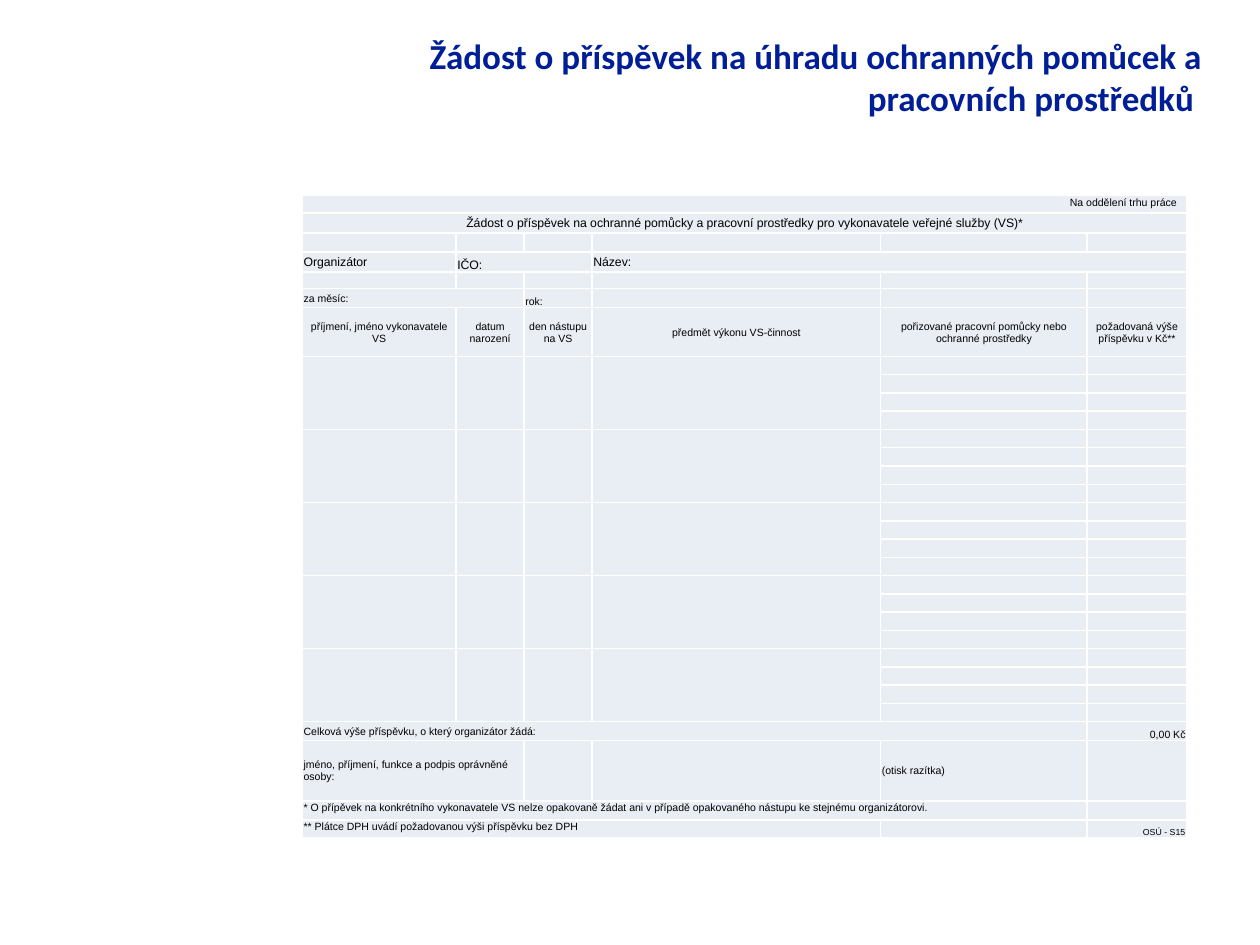
from dataclasses import dataclass
from itertools import product

from lxml.etree import SubElement
from pptx import Presentation
from pptx.dml.color import RGBColor
from pptx.enum.text import MSO_ANCHOR as Anchor, MSO_AUTO_SIZE as AutoSize, PP_ALIGN as Align
from pptx.oxml.ns import qn
from pptx.slide import Slide
from pptx.util import Inches, Pt

COLUMNS = [1.22, 0.54, 0.54, 2.29, 1.64, 0.79]
HEAD_ROWS = [0.14, 0.16, 0.15, 0.16, 0.13, 0.15, 0.39]
FOOT_ROWS = [0.15, 0.48, 0.15, 0.14]
APPLICANTS, ITEMS, BLOCK_HEIGHT = 5, 4, 0.58
FIRST_ITEM = len(HEAD_ROWS)
TOTAL = FIRST_ITEM + APPLICANTS * ITEMS
SIGNATURE, NOTE_ONE, NOTE_TWO = TOTAL + 1, TOTAL + 2, TOTAL + 3

HEADINGS = [
    "příjmení, jméno vykonavatele VS",
    "datum narození",
    "den nástupu na VS",
    "předmět výkonu VS-činnost",
    "pořizované pracovní pomůcky nebo ochranné prostředky",
    "požadovaná výše příspěvku v Kč**",
]
FORM_TITLE = "Žádost o příspěvek na ochranné pomůcky a pracovní prostředky pro vykonavatele veřejné služby (VS)*"
NOTE = (
    "* O přípěvek na konkrétního vykonavatele VS nelze opakovaně žádat "
    "ani v případě opakovaného nástupu ke stejnému organizátorovi."
)
ROW_SPANS = [(0, 0, 5), (1, 0, 5), (3, 1, 2), (3, 3, 5), (5, 0, 1),
             (TOTAL, 0, 4), (SIGNATURE, 0, 1), (NOTE_ONE, 0, 4), (NOTE_TWO, 0, 3)]
ENTRIES = [
    (0, 0, "Na oddělení trhu práce", 6, Align.RIGHT, Anchor.TOP),
    (1, 0, FORM_TITLE, 7, Align.CENTER, Anchor.MIDDLE),
    (3, 0, "Organizátor", 7, Align.LEFT, Anchor.MIDDLE),
    (3, 1, "IČO:", 7, Align.LEFT, Anchor.BOTTOM),
    (3, 3, "Název:", 7, Align.LEFT, Anchor.MIDDLE),
    (5, 0, "za měsíc:", 6, Align.LEFT, Anchor.MIDDLE),
    (5, 2, "rok:", 6, Align.LEFT, Anchor.BOTTOM),
    *[(6, column, text, 6, Align.CENTER, Anchor.MIDDLE) for column, text in enumerate(HEADINGS)],
    (TOTAL, 0, "Celková výše příspěvku, o který organizátor žádá:", 6, Align.LEFT, Anchor.MIDDLE),
    (TOTAL, 5, "0,00 Kč", 6, Align.RIGHT, Anchor.BOTTOM),
    (SIGNATURE, 0, "jméno, příjmení, funkce a podpis oprávněné osoby:", 6, Align.LEFT, Anchor.MIDDLE),
    (SIGNATURE, 4, "(otisk razítka)", 6, Align.LEFT, Anchor.MIDDLE),
    (NOTE_ONE, 0, NOTE, 6, Align.LEFT, Anchor.TOP),
    (NOTE_TWO, 0, "** Plátce DPH uvádí požadovanou výši příspěvku bez DPH", 6, Align.LEFT, Anchor.TOP),
    (NOTE_TWO, 5, "OSÚ - S15", 5, Align.RIGHT, Anchor.BOTTOM),
]


def color(value):
    return RGBColor.from_string(value)


@dataclass
class FormPage:
    """Draws the elements of a form slide in one style."""

    page: Slide
    title_font: str = "Calibri"
    body_font: str = "Arial"
    title_color: str = "001E96"
    text_color: str = "000000"
    cell_color: str = "E9EDF4"
    border_color: str = "FFFFFF"

    def set_text(self, frame, text, size, align, font, ink, bold=False):
        para = frame.paragraphs[0]
        para.text = text
        para.alignment = align
        for span in para.runs:
            span.font.name = font
            span.font.size = Pt(size)
            span.font.bold = bold
            span.font.color.rgb = color(ink)

    def title(self, text, left, top, width, height):
        box = self.page.shapes.title
        box.left, box.top, box.width, box.height = map(Inches, (left, top, width, height))
        frame = box.text_frame
        frame.word_wrap = True
        frame.auto_size = AutoSize.NONE
        frame.vertical_anchor = Anchor.MIDDLE
        self.set_text(frame, text, 20, Align.RIGHT, self.title_font, self.title_color, True)

    def table(self, left, top, columns, rows):
        frame = self.page.shapes.add_table(
            len(rows), len(columns), Inches(left), Inches(top), Inches(sum(columns)), Inches(sum(rows))
        )
        table = frame.table
        for column, width in zip(table.columns, columns):
            column.width = Inches(width)
        for row, height in zip(table.rows, rows):
            row.height = Inches(height)
        for cell in table.iter_cells():
            self.blank_cell(cell)
        return table

    def blank_cell(self, cell):
        cell.margin_left = cell.margin_right = cell.margin_top = Inches(0.01)
        cell.margin_bottom = 0
        properties = cell._tc.get_or_add_tcPr()
        for side in ("lnL", "lnR", "lnT", "lnB"):
            line = SubElement(properties, qn(f"a:{side}"), w=str(Pt(1)))
            fill = SubElement(line, qn("a:solidFill"))
            SubElement(fill, qn("a:srgbClr"), val=self.border_color)
        cell.fill.solid()
        cell.fill.fore_color.rgb = color(self.cell_color)
        SubElement(cell.text_frame.paragraphs[0]._p, qn("a:endParaRPr"), sz="600")

    def entry(self, cell, text, size, align, anchor):
        cell.vertical_anchor = anchor
        self.set_text(cell.text_frame, text, size, align, self.body_font, self.text_color)


def main():
    deck = Presentation()
    deck.slide_width, deck.slide_height = Inches(10), Inches(7.5)
    form = FormPage(deck.slides.add_slide(deck.slide_layouts[5]))
    form.title("Žádost o příspěvek na úhradu ochranných pomůcek a pracovních prostředků ", 2.4, 0.21, 7.24, 0.79)

    item_rows = [BLOCK_HEIGHT / ITEMS] * (APPLICANTS * ITEMS)
    table = form.table(2.4, 1.55, COLUMNS, HEAD_ROWS + item_rows + FOOT_ROWS)
    for row, first, last in ROW_SPANS:
        table.cell(row, first).merge(table.cell(row, last))
    for row, column in product(range(FIRST_ITEM, TOTAL, ITEMS), range(4)):
        table.cell(row, column).merge(table.cell(row + ITEMS - 1, column))
    for row, column, *content in ENTRIES:
        form.entry(table.cell(row, column), *content)
    table.cell(0, 0).margin_right = Inches(0.08)

    deck.save("out.pptx")


if __name__ == "__main__":
    main()
